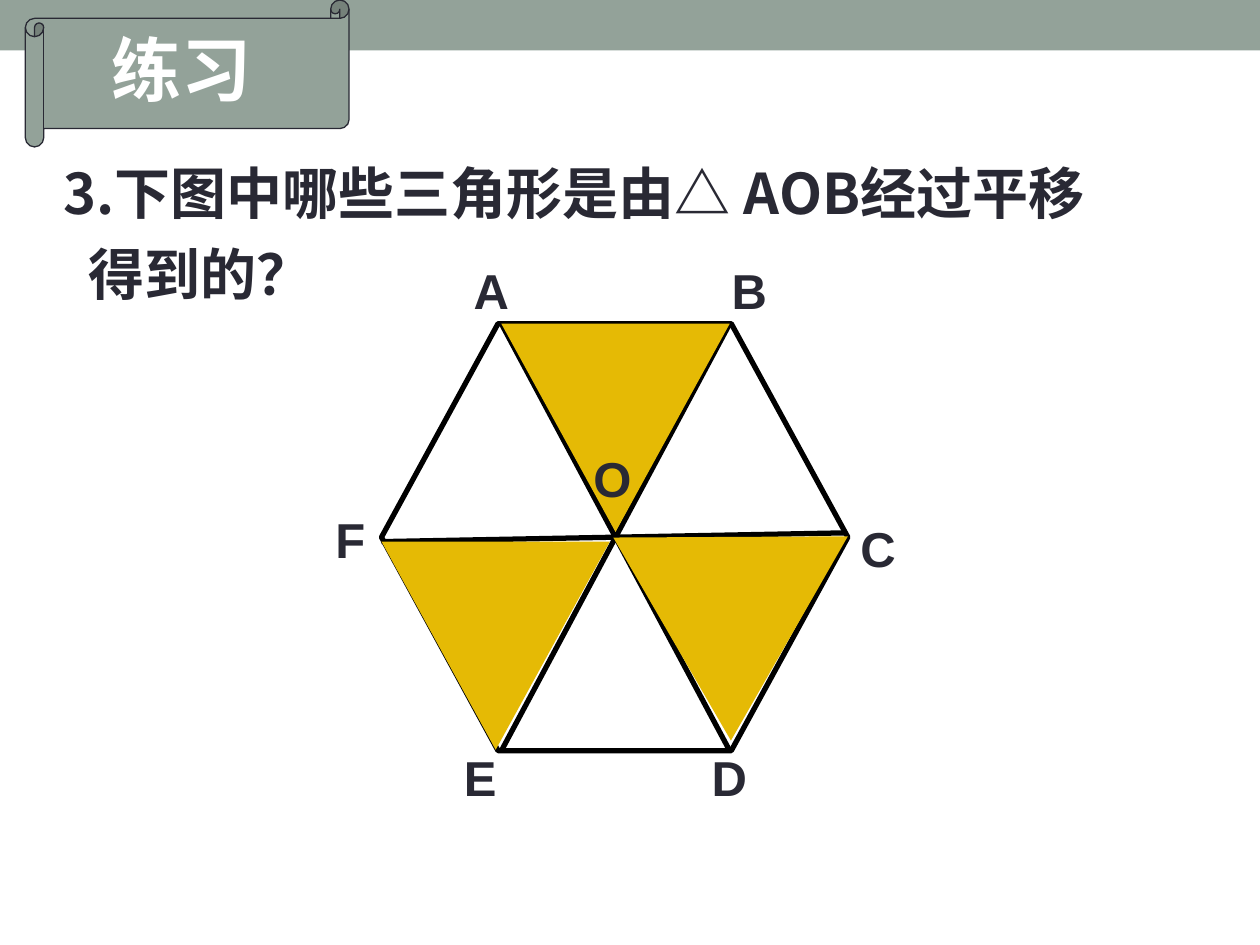
from dataclasses import dataclass

from lxml.etree import SubElement
from pptx import Presentation
from pptx.dml.color import RGBColor
from pptx.enum.shapes import MSO_CONNECTOR as Connector, MSO_SHAPE as Preset
from pptx.enum.text import MSO_AUTO_SIZE as AutoSize
from pptx.oxml.ns import qn
from pptx.util import Pt


@dataclass(frozen=True)
class Theme:
    sage = RGBColor.from_string("93A299")
    ink = RGBColor.from_string("292934")
    gold = RGBColor.from_string("E5BA05")
    black = RGBColor.from_string("000000")
    white = RGBColor.from_string("FFFFFF")
    latin_font = "Arial"
    chinese_font = "Noto Sans CJK SC"
    label_size = 28
    question_size = 32
    title_size = 40
    edge_width = 3
    banner_width = 0.75


THEME = Theme()

LEFT, RIGHT, TOP, BOTTOM = 218, 484.5, 185, 429
TOP_LEFT, TOP_RIGHT = 286.5, 417
SIDE = TOP_RIGHT - TOP_LEFT
TRIANGLE_HEIGHT = 119


def add_shape(slide, preset, box, fill=None, line=None, width=0, rotation=0):
    shape = slide.shapes.add_shape(preset, *map(Pt, box))
    shape.shadow.inherit = False
    shape.rotation = rotation
    if fill is None:
        shape.fill.background()
    else:
        shape.fill.solid()
        shape.fill.fore_color.rgb = fill
    if line is None:
        shape.line.fill.background()
    else:
        shape.line.color.rgb = line
        shape.line.width = Pt(width)
    return shape


def add_diagonal(slide, start, end):
    connector = slide.shapes.add_connector(
        Connector.STRAIGHT, *map(Pt, (*start, *end)))
    connector.line.color.rgb = THEME.black
    connector.line.width = Pt(THEME.edge_width)
    SubElement(connector._element.spPr, qn("a:effectLst"))


def add_text(slide, box, lines, size, color, font, gap=0):
    """Write (text, left indent) lines, with a gap between paragraphs."""
    frame = slide.shapes.add_textbox(*map(Pt, box)).text_frame
    frame.word_wrap = True
    frame.auto_size = AutoSize.SHAPE_TO_FIT_TEXT
    for index, (text, indent) in enumerate(lines):
        paragraph = frame.add_paragraph() if index else frame.paragraphs[0]
        paragraph.space_before = Pt(gap if index else 0)
        paragraph._p.get_or_add_pPr().set("marL", str(Pt(indent)))
        run = paragraph.add_run()
        run.text = text
        run.font.size = Pt(size)
        run.font.bold = True
        run.font.name = font
        run.font.color.rgb = color
        east_asian = SubElement(run._r.get_or_add_rPr(), qn("a:ea"))
        east_asian.set("typeface", THEME.chinese_font)


def add_label(slide, letter, left, top):
    add_text(slide, (left, top, 39.5, 41), [(letter, 0)],
             THEME.label_size, THEME.ink, THEME.latin_font)


def add_triangle(slide, left, top, width=SIDE, height=TRIANGLE_HEIGHT, rotation=0):
    add_shape(slide, Preset.FLOWCHART_MERGE, (left, top, width, height),
              THEME.gold, rotation=rotation)


def add_hexagon(slide):
    hexagon = add_shape(slide, Preset.HEXAGON,
                        (LEFT, TOP, RIGHT - LEFT, BOTTOM - TOP),
                        line=THEME.black, width=THEME.edge_width)
    hexagon.adjustments[0] = 0.273
    hexagon.adjustments[1] = 1.1547
    add_diagonal(slide, (TOP_LEFT, TOP), (TOP_RIGHT, BOTTOM))
    add_diagonal(slide, (TOP_RIGHT, TOP), (TOP_LEFT, BOTTOM))
    add_diagonal(slide, (LEFT, 309.5), (RIGHT - 2, 304.5))

    labels = {"F": (184.5, 287.5), "E": (258, 423.5), "D": (399.5, 423.5),
              "B": (411, 145.5), "C": (484.5, 292.5), "A": (263.5, 145.5)}
    for letter, position in labels.items():
        add_label(slide, letter, *position)

    add_triangle(slide, TOP_LEFT, TOP)
    add_label(slide, "O", 332, 252.5)
    add_triangle(slide, LEFT, 309.5)
    add_triangle(slide, 333.5, 278, 134.5, 116, rotation=119.8)


def add_question(slide):
    lines = [("3.下图中哪些三角形是由△ AOB经过平移", 29), ("得到的？", 43.5)]
    add_text(slide, (0, 87, 700.5, 103), lines, THEME.question_size,
             THEME.ink, THEME.chinese_font, gap=8)


def add_banner(slide):
    add_shape(slide, Preset.HORIZONTAL_SCROLL, (14.5, 0, 185, 84),
              THEME.sage, THEME.ink, THEME.banner_width)
    add_text(slide, (29.5, 11.5, 177, 55.5), [("练习", 27)],
             THEME.title_size, THEME.white, THEME.latin_font)


def main():
    presentation = Presentation()
    presentation.slide_width, presentation.slide_height = Pt(720), Pt(540)
    slide = presentation.slides.add_slide(presentation.slide_layouts[6])
    add_shape(slide, Preset.RECTANGLE, (0, 0, 720, 28.8), THEME.sage)
    add_hexagon(slide)
    add_question(slide)
    add_banner(slide)
    presentation.save("out.pptx")


if __name__ == "__main__":
    main()
